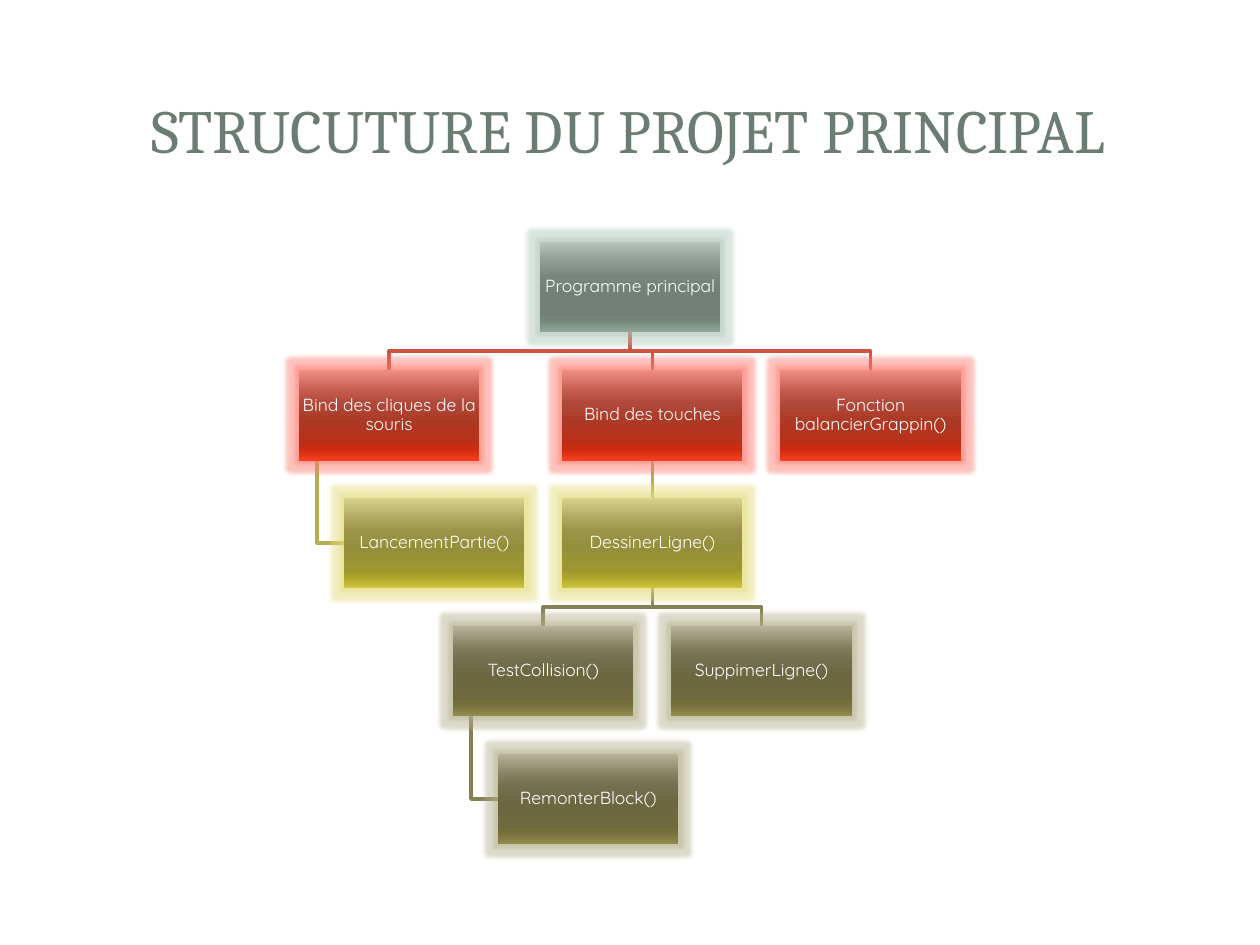
from pptx import Presentation
from pptx.dml.color import RGBColor
from pptx.enum.shapes import MSO_CONNECTOR, MSO_SHAPE
from pptx.enum.text import MSO_ANCHOR, PP_ALIGN
from pptx.oxml import parse_xml
from pptx.oxml.ns import nsdecls, qn
from pptx.util import Pt

RECTANGLE = MSO_SHAPE.RECTANGLE
STRAIGHT = MSO_CONNECTOR.STRAIGHT
MIDDLE = MSO_ANCHOR.MIDDLE
CENTER = PP_ALIGN.CENTER
BOTTOM_SIDE, TOP_SIDE = 2, 0

STOPS = (0, 25, 38, 55, 80, 88, 100)
THEME = {
    "title": {"name": "Cambria", "size": Pt(35), "color": "6B7D72"},
    "label": {"name": "Quicksand", "size": Pt(10), "color": "FFFFFF"},
    "line_width": Pt(2),
    # Each level: gradient, glow and incoming line
    "root": {"gradient": "B6C3BB 8B9890 79867E 728078 708176 75887C 91A79A",
             "glow": "AFC6B9", "line": None},
    "bind": {"gradient": "EF8E85 C1584A B04839 AD3A26 BA2F18 CD2C10 F63D1F",
             "glow": "FF776C", "line": "CF543F"},
    "call": {"gradient": "D8D290 AAA358 9A9348 958F39 9E962F ACA32C D0C53D",
             "glow": "E5DC77", "line": "B5AE53"},
    "step": {"gradient": "B5B299 807C5C 726F4F 6B6741 6E6A3D 77723D 928C50",
             "glow": "B3AE88", "line": "848058"},
}

# Grid of the tree
BOX_W, BOX_H, GAP = 103.1, 51.5, 21.64
ROW_TOP, ROW_STEP = 138.3, BOX_H + GAP
COLUMN_STEP = BOX_W + GAP
INDENT = BOX_W / 4
ROOT_X, MOUSE_X, KEYS_X = 308.5, 170.8, 321.2
COLLISION_X = KEYS_X - COLUMN_STEP / 2

# Label: level, left, row
BOXES = {
    "Programme principal": ("root", ROOT_X, 0),
    "Bind des cliques de la souris": ("bind", MOUSE_X, 1),
    "Bind des touches": ("bind", KEYS_X, 1),
    "Fonction balancierGrappin()": ("bind", KEYS_X + COLUMN_STEP, 1),
    "LancementPartie()": ("call", MOUSE_X + INDENT, 2),
    "DessinerLigne()": ("call", KEYS_X, 2),
    "TestCollision()": ("step", COLLISION_X, 3),
    "SuppimerLigne()": ("step", COLLISION_X + COLUMN_STEP, 3),
    "RemonterBlock()": ("step", COLLISION_X + INDENT, 4),
}
# Parent, child, how the line runs
LINKS = [
    ("Programme principal", "Fonction balancierGrappin()", "branch"),
    ("Programme principal", "Bind des touches", "branch"),
    ("Programme principal", "Bind des cliques de la souris", "branch"),
    ("Bind des cliques de la souris", "LancementPartie()", "hang"),
    ("Bind des touches", "DessinerLigne()", "straight"),
    ("DessinerLigne()", "SuppimerLigne()", "branch"),
    ("DessinerLigne()", "TestCollision()", "branch"),
    ("TestCollision()", "RemonterBlock()", "hang"),
]


def write(frame, text, style, margin):
    """Put one centred, formatted line of text in a frame."""
    frame_format = {"word_wrap": True, "vertical_anchor": MIDDLE,
                    "margin_left": margin, "margin_right": margin,
                    "margin_top": margin, "margin_bottom": margin}
    for name, value in frame_format.items():
        setattr(frame, name, value)
    para = frame.paragraphs[0]
    para.alignment = CENTER
    span = para.add_run()
    span.text = text
    for name in ("name", "size"):
        setattr(span.font, name, style[name])
    span.font.color.rgb = RGBColor.from_string(style["color"])
    return para


def paint(shape, level):
    """Give a box its vertical gradient and soft glow."""
    shape.line.fill.background()
    shape.fill.gradient()
    shape.fill.gradient_angle = 270
    stops = "".join(
        f'<a:gs pos="{stop * 1000}"><a:srgbClr val="{color}"/></a:gs>'
        for stop, color in zip(STOPS, level["gradient"].split()))
    properties = shape._element.spPr
    old_stops = properties.find(qn("a:gradFill")).find(qn("a:gsLst"))
    old_stops.getparent().replace(
        old_stops, parse_xml(f'<a:gsLst {nsdecls("a")}>{stops}</a:gsLst>'))
    shape.shadow.inherit = False
    properties.find(qn("a:effectLst")).append(parse_xml(
        f'<a:glow {nsdecls("a")} rad="63500"><a:srgbClr val="{level["glow"]}">'
        '<a:alpha val="45000"/></a:srgbClr></a:glow>'))


deck = Presentation()
deck.slide_width, deck.slide_height = Pt(720), Pt(540)
page = deck.slides.add_slide(deck.slide_layouts[5])

# Title
title = page.shapes.title
title.left, title.top, title.width, title.height = Pt(34), Pt(32.5), Pt(650), Pt(82)
write(title.text_frame, "STRUCUTURE DU PROJET PRINCIPAL", THEME["title"], Pt(3.6))

# Boxes
boxes = {}
for label, (level, left, row) in BOXES.items():
    box = page.shapes.add_shape(RECTANGLE, Pt(left), Pt(ROW_TOP + row * ROW_STEP),
                                Pt(BOX_W), Pt(BOX_H))
    paint(box, THEME[level])
    para = write(box.text_frame, label, THEME["label"], Pt(0.5))
    para.line_spacing = 0.9
    para.space_after = Pt(3.5)
    boxes[label] = box

# Lines, placed behind the boxes
first_box = boxes["Programme principal"]
for parent_label, child_label, run in LINKS:
    parent, child = boxes[parent_label], boxes[child_label]
    bottom = parent.top + parent.height
    if run == "straight":
        link = page.shapes.add_connector(STRAIGHT, 0, 0, 0, 0)
        link.begin_connect(parent, BOTTOM_SIDE)
        link.end_connect(child, TOP_SIDE)
        link._element.spPr.append(parse_xml(f'<a:effectLst {nsdecls("a")}/>'))
    else:
        if run == "branch":
            start = parent.left + parent.width // 2
            end = child.left + child.width // 2
            middle = (bottom + child.top) // 2
            points = [(start, middle), (end, middle), (end, child.top)]
        else:
            start = parent.left + parent.width // 10
            middle = child.top + child.height // 2
            points = [(start, middle), (child.left, middle)]
        builder = page.shapes.build_freeform(start, bottom)
        builder.add_line_segments(points, close=False)
        link = builder.convert_to_shape()
        link.fill.background()
        link.shadow.inherit = False
    link.line.width = THEME["line_width"]
    level = BOXES[child_label][0]
    link.line.color.rgb = RGBColor.from_string(THEME[level]["line"])
    first_box._element.addprevious(link._element)

deck.save("out.pptx")
